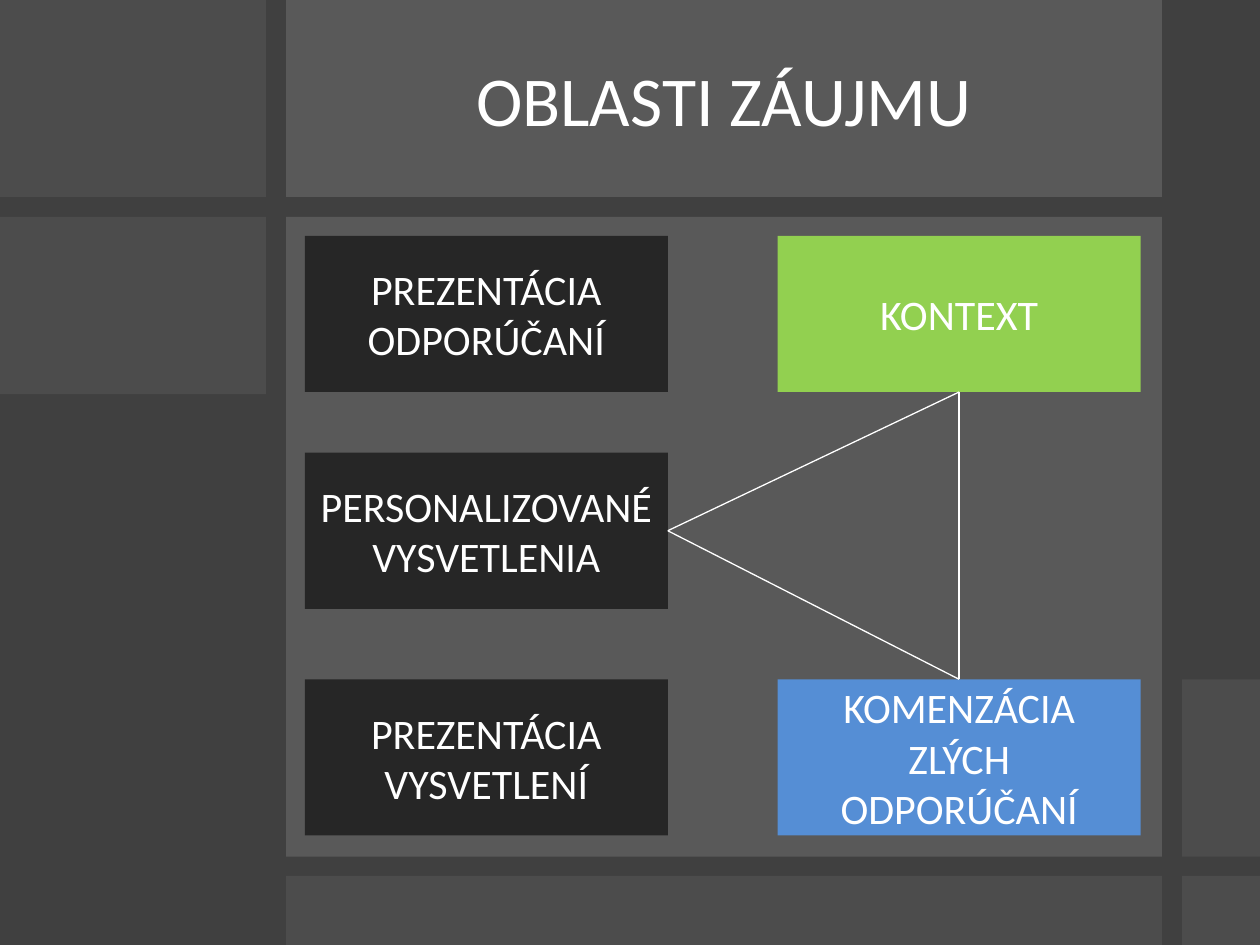
from typing import NamedTuple

from lxml import etree
from pptx import Presentation
from pptx.dml.color import RGBColor
from pptx.enum import shapes, text
from pptx.oxml import ns
from pptx.util import Pt

FONT = "Calibri"
WHITE, BACKDROP, PANEL = "FFFFFF", "404040", "595959"
DARK, GREEN, BLUE = "262626", "92D050", "558ED5"
BOTTOM, RIGHT, TOP = 2, 3, 0

SLIDE_W, SLIDE_H = 720, 540
MAIN_X, MAIN_W = 163.5, 500.5
SIDE_W = 152
RIGHT_X, RIGHT_W = 675.5, 44.5
HEADER_H = 112.5
PANEL_Y, PANEL_H = 124, 365.5
FOOT_Y, FOOT_H = 500.5, 39.5
TILE_H = 101.3
TOPIC_W, TOPIC_H = 207.4, 89.2
COL_X = (174.2, 444.4)
ROW_Y = (134.8, 258.7, 388.2)


class Box(NamedTuple):
    x: float
    y: float
    w: float
    h: float


class Topic(NamedTuple):
    label: str
    col: int
    row: int
    fill: str


class Link(NamedTuple):
    start: str
    start_side: int
    end: str
    end_side: int


CONTEXT = "KONTEXT"
PERSONAL = "PERSONALIZOVANÉ VYSVETLENIA"
COMPENSATION = "KOMENZÁCIA ZLÝCH ODPORÚČANÍ"

TOPICS = [
    Topic("PREZENTÁCIA ODPORÚČANÍ", 0, 0, DARK),
    Topic(PERSONAL, 0, 1, DARK),
    Topic("PREZENTÁCIA VYSVETLENÍ", 0, 2, DARK),
    Topic(CONTEXT, 1, 0, GREEN),
    Topic(COMPENSATION, 1, 2, BLUE),
]
LINKS = [
    Link(CONTEXT, BOTTOM, PERSONAL, RIGHT),
    Link(COMPENSATION, TOP, PERSONAL, RIGHT),
    Link(CONTEXT, BOTTOM, COMPENSATION, TOP),
]
SIDE_TILES = [
    Box(0, 0, SIDE_W, HEADER_H),
    Box(0, PANEL_Y, SIDE_W, TILE_H),
    Box(RIGHT_X, ROW_Y[2], RIGHT_W, TILE_H),
    Box(RIGHT_X, FOOT_Y, RIGHT_W, FOOT_H),
    Box(MAIN_X, FOOT_Y, MAIN_W, FOOT_H),
]


def rgb(value: str) -> RGBColor:
    return RGBColor.from_string(value)


def paint(shape, fill: str) -> None:
    shape.fill.solid()
    shape.fill.fore_color.rgb = rgb(fill)


def add_block(slide, box: Box, fill: str):
    block = slide.shapes.add_shape(shapes.MSO_SHAPE.RECTANGLE, *map(Pt, box))
    block.shadow.inherit = False
    paint(block, fill)
    block.line.fill.background()
    return block


def make_half_transparent(block) -> None:
    color = block.fill._xPr.find(".//" + ns.qn("a:srgbClr"))
    etree.SubElement(color, ns.qn("a:alpha"), val="50000")


def write(shape, label: str, size: float) -> None:
    """Put one centred white run into the shape."""
    frame = shape.text_frame
    frame.word_wrap = True
    frame.auto_size = text.MSO_AUTO_SIZE.NONE
    frame.vertical_anchor = text.MSO_ANCHOR.MIDDLE
    paragraph = frame.paragraphs[0]
    paragraph.alignment = text.PP_ALIGN.CENTER
    run = paragraph.add_run()
    run.text = label
    run.font.name = FONT
    run.font.size = Pt(size)
    run.font.color.rgb = rgb(WHITE)


def add_topic(slide, topic: Topic):
    box = Box(COL_X[topic.col], ROW_Y[topic.row], TOPIC_W, TOPIC_H)
    block = add_block(slide, box, topic.fill)
    write(block, topic.label, 24)
    return block


def add_link(slide, link: Link, blocks: dict) -> None:
    line = slide.shapes.add_connector(shapes.MSO_CONNECTOR.STRAIGHT, 0, 0, 0, 0)
    line.begin_connect(blocks[link.start], link.start_side)
    line.end_connect(blocks[link.end], link.end_side)
    line.line.color.rgb = rgb(WHITE)
    line.line.width = Pt(0.75)
    etree.SubElement(line._element.spPr, ns.qn("a:effectLst"))


def place_title(slide, label: str) -> None:
    """Format the title placeholder and lift it above the backdrop."""
    title = slide.shapes.title
    title.left, title.top = Pt(MAIN_X), Pt(0)
    title.width, title.height = Pt(MAIN_W), Pt(HEADER_H)
    paint(title, PANEL)
    write(title, label, 40)
    slide.shapes._spTree.append(title._element)


def main() -> None:
    deck = Presentation()
    deck.slide_width, deck.slide_height = Pt(SLIDE_W), Pt(SLIDE_H)
    slide = deck.slides.add_slide(deck.slide_layouts[5])

    add_block(slide, Box(0, 0, SLIDE_W, SLIDE_H), BACKDROP)
    add_block(slide, Box(MAIN_X, PANEL_Y, MAIN_W, PANEL_H), PANEL)
    blocks = {topic.label: add_topic(slide, topic) for topic in TOPICS}
    for link in LINKS:
        add_link(slide, link, blocks)
    place_title(slide, "OBLASTI ZÁUJMU")
    for tile in SIDE_TILES:
        make_half_transparent(add_block(slide, tile, PANEL))

    deck.save("out.pptx")


if __name__ == "__main__":
    main()
